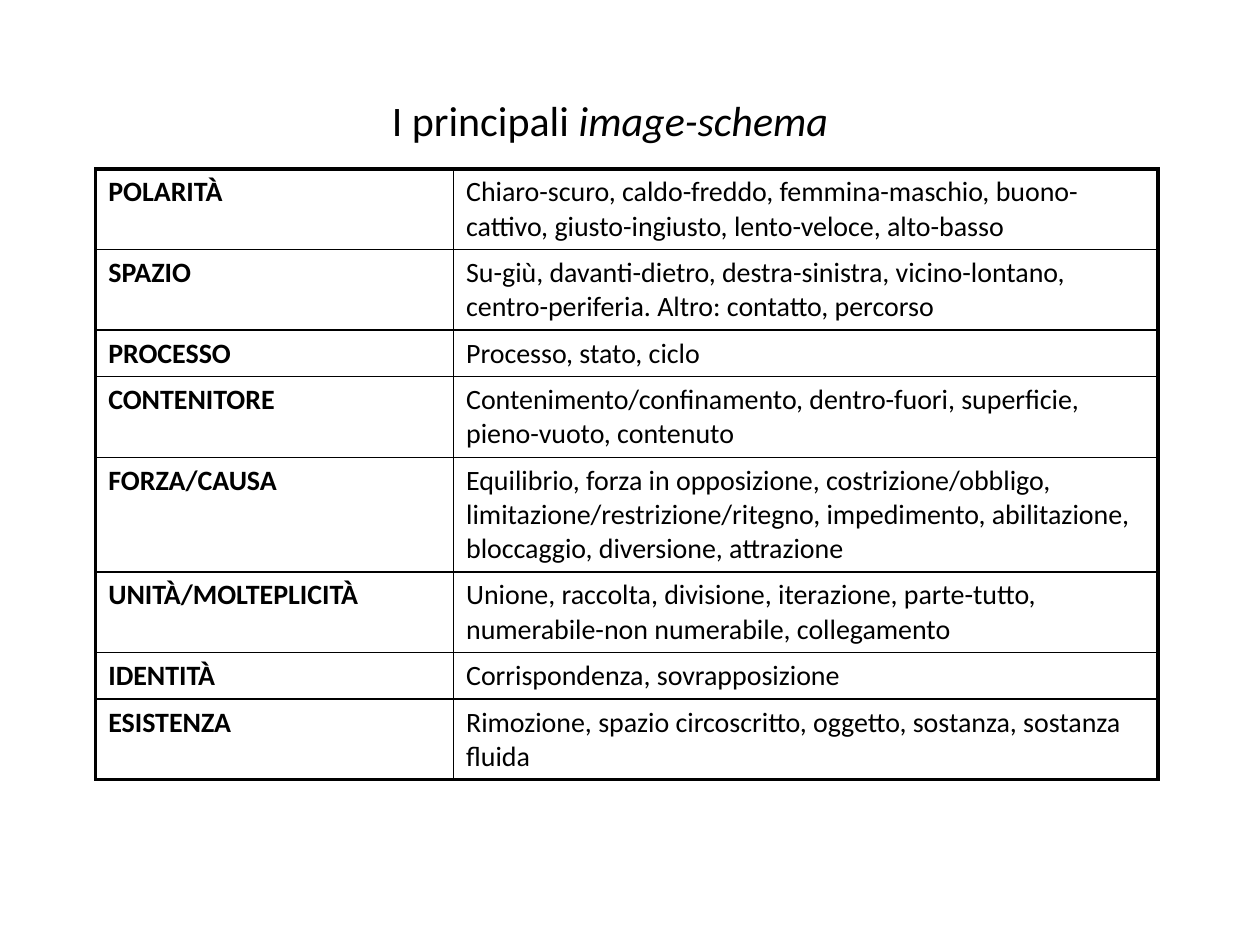
from lxml import etree
from pptx import Presentation
from pptx import util as u
from pptx.dml.color import RGBColor
from pptx.enum import text
from pptx.oxml.ns import qn

COLORS = {"text": "000000", "border": "000000", "background": "FFFFFF"}
FONT = "Calibri"
THIN, THICK = 1, 2.25
COLUMN_WIDTHS = (2.84, 5.59)
CELL_PADDING, LINE_HEIGHT = 0.1, 0.27

# Schema, examples, number of text lines
SCHEMAS = [
    ("POLARITÀ", "Chiaro-scuro, caldo-freddo, femmina-maschio, buono-cattivo, "
     "giusto-ingiusto, lento-veloce, alto-basso", 2),
    ("SPAZIO", "Su-giù, davanti-dietro, destra-sinistra, vicino-lontano, "
     "centro-periferia. Altro: contatto, percorso", 2),
    ("PROCESSO", "Processo, stato, ciclo", 1),
    ("CONTENITORE", "Contenimento/confinamento, dentro-fuori, superficie, "
     "pieno-vuoto, contenuto", 2),
    ("FORZA/CAUSA", "Equilibrio, forza in opposizione, costrizione/obbligo, "
     "limitazione/restrizione/ritegno, impedimento, abilitazione, "
     "bloccaggio, diversione, attrazione", 3),
    ("UNITÀ/MOLTEPLICITÀ", "Unione, raccolta, divisione, iterazione, parte-tutto, "
     "numerabile-non numerabile, collegamento", 2),
    ("IDENTITÀ", "Corrispondenza, sovrapposizione", 1),
    ("ESISTENZA", "Rimozione, spazio circoscritto, oggetto, sostanza, "
     "sostanza fluida", 2),
]


def format_run(r, size, bold=False, italic=False):
    r.font.name = FONT
    r.font.size = u.Pt(size)
    r.font.bold = bold
    r.font.italic = italic
    r.font.color.rgb = RGBColor.from_string(COLORS["text"])


def set_borders(cell, left, right, top, bottom):
    """Draw the four cell sides with widths in points."""
    tcPr = cell._tc.get_or_add_tcPr()
    for side, width in zip("LRTB", (left, right, top, bottom)):
        ln = etree.SubElement(tcPr, qn(f"a:ln{side}"), w=str(u.Pt(width)))
        fill = etree.SubElement(ln, qn("a:solidFill"))
        etree.SubElement(fill, qn("a:srgbClr"), val=COLORS["border"])


def add_title(s):
    sp = s.shapes.title
    sp.left, sp.top = u.Inches(3.01), u.Inches(0.7)
    sp.width, sp.height = u.Inches(3.76), u.Inches(0.5)
    tf = sp.text_frame
    tf.word_wrap = False
    tf.auto_size = text.MSO_AUTO_SIZE.SHAPE_TO_FIT_TEXT
    tf.vertical_anchor = text.MSO_ANCHOR.TOP
    p = tf.paragraphs[0]
    p.alignment = text.PP_ALIGN.LEFT
    for words, italic in (("I principali ", False), ("image-schema", True)):
        r = p.add_run()
        r.text = words
        format_run(r, 24, italic=italic)


def add_schema_table(s):
    heights = [CELL_PADDING + LINE_HEIGHT * lines for _, _, lines in SCHEMAS]
    table = s.shapes.add_table(
        len(SCHEMAS), len(COLUMN_WIDTHS), u.Inches(0.76), u.Inches(1.34),
        u.Inches(sum(COLUMN_WIDTHS)), u.Inches(sum(heights))).table
    table.first_row = table.horz_banding = False
    for column, width in zip(table.columns, COLUMN_WIDTHS):
        column.width = u.Inches(width)

    last = len(SCHEMAS) - 1
    for i, (name, examples, _) in enumerate(SCHEMAS):
        table.rows[i].height = u.Inches(heights[i])
        for j, words in enumerate((name, examples)):
            cell = table.cell(i, j)
            cell.text_frame.text = words
            format_run(cell.text_frame.paragraphs[0].runs[0], 16, bold=j == 0)
            set_borders(cell,
                        left=THICK if j == 0 else THIN,
                        right=THICK if j == 1 else THIN,
                        top=THICK if i == 0 else THIN,
                        bottom=THICK if i == last else THIN)
            cell.fill.solid()
            cell.fill.fore_color.rgb = RGBColor.from_string(COLORS["background"])


def main():
    prs = Presentation()
    prs.slide_width, prs.slide_height = u.Inches(10), u.Inches(7.5)
    s = prs.slides.add_slide(prs.slide_layouts[5])
    add_schema_table(s)
    add_title(s)
    prs.save("out.pptx")


if __name__ == "__main__":
    main()
